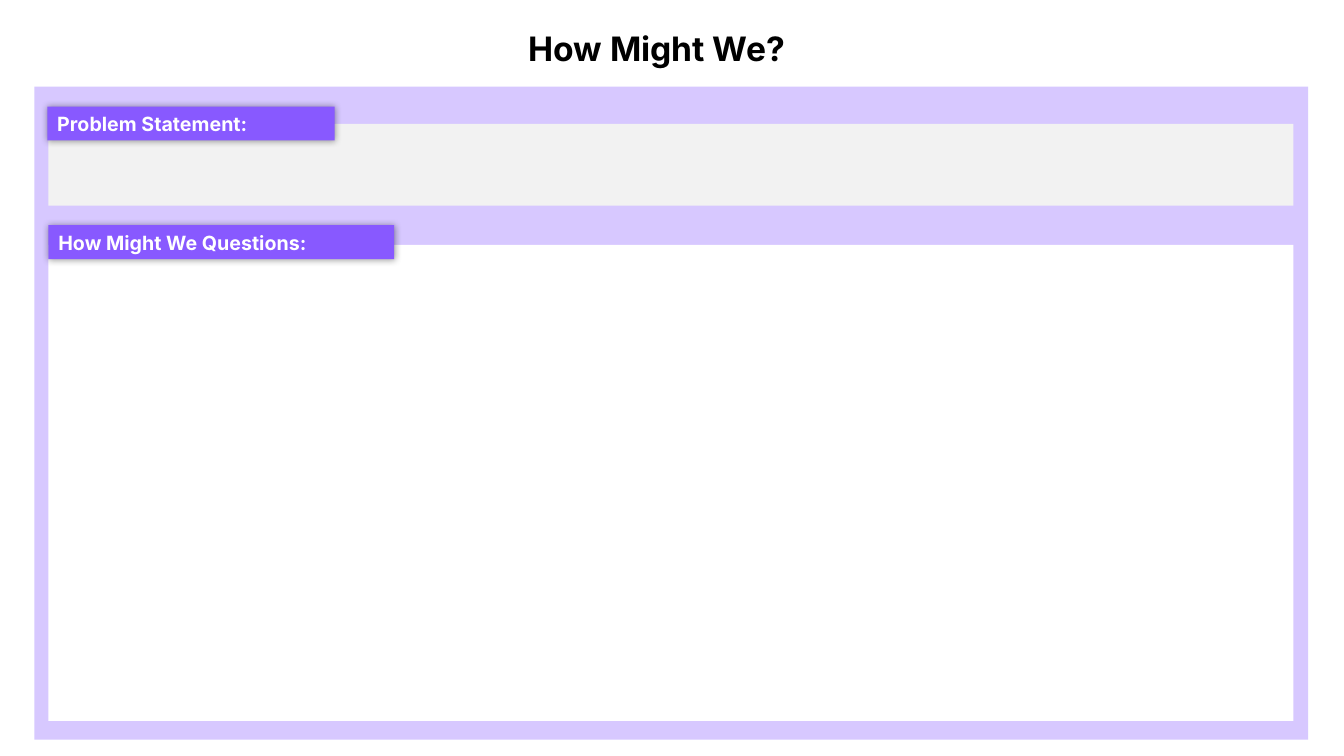
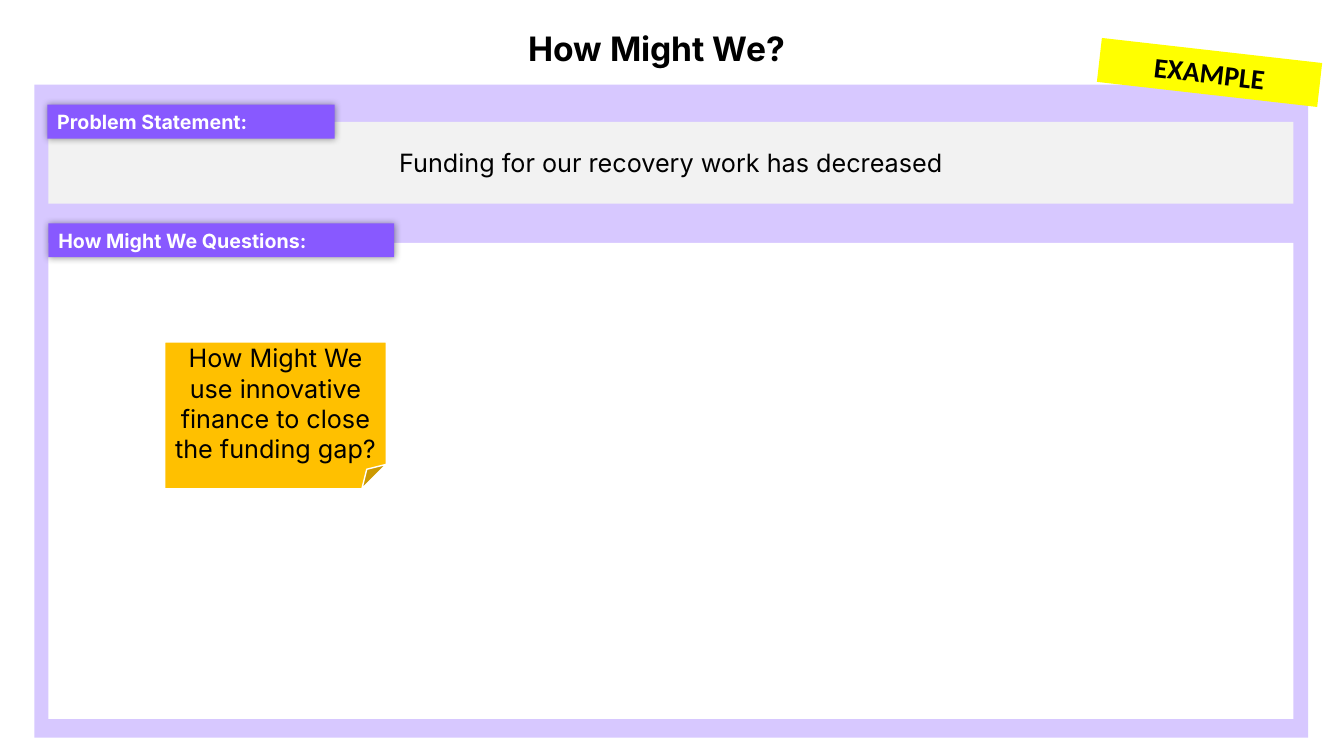
from dataclasses import dataclass

from lxml.etree import SubElement
from pptx import Presentation
from pptx.dml.color import RGBColor
from pptx.enum.shapes import MSO_SHAPE
from pptx.enum.text import MSO_ANCHOR, MSO_AUTO_SIZE, PP_ALIGN
from pptx.oxml.ns import qn
from pptx.util import Pt


@dataclass(frozen=True)
class Theme:
    black: str = "000000"
    white: str = "FFFFFF"
    lilac: str = "D7C8FF"
    violet: str = "8859FF"
    grey: str = "F2F2F2"
    amber: str = "FFC000"
    yellow: str = "FFFF00"
    font: str = "Inter"
    sticker_font: str = "Calibri"
    title_size: int = 24
    sticker_size: int = 20
    body_size: int = 18
    tag_size: int = 14


theme = Theme()


def write_text(shape, text, size, color=theme.black, bold=False,
               alignment=PP_ALIGN.CENTER, font_name=theme.font):
    frame = shape.text_frame
    frame.text = text
    frame.word_wrap = True
    frame.auto_size = MSO_AUTO_SIZE.NONE
    frame.vertical_anchor = MSO_ANCHOR.MIDDLE
    paragraph = frame.paragraphs[0]
    paragraph.alignment = alignment
    font = paragraph.runs[0].font
    font.name = font_name
    font.size = Pt(size)
    font.bold = bold
    font.color.rgb = RGBColor.from_string(color)


def add_box(slide, left, top, width, height, fill, preset=MSO_SHAPE.RECTANGLE):
    shape = slide.shapes.add_shape(preset, Pt(left), Pt(top), Pt(width), Pt(height))
    shape.shadow.inherit = False
    shape.fill.solid()
    shape.fill.fore_color.rgb = RGBColor.from_string(fill)
    shape.line.fill.background()
    return shape


presentation = Presentation()
presentation.slide_width = Pt(960)
presentation.slide_height = Pt(540)
title_only = presentation.slide_layouts[5]

panel_left, panel_width, panel_height = 24.5, 910, 466.5
field_left, field_width = 34.6, 889.2
tag_height = 24.2
fields = [
    ("How Might We Questions:", 34.6, 99, 247, 113, 340, theme.white),
    ("Problem Statement:", 33.8, 14.3, 205.2, 26.6, 58.4, theme.grey),
]
pages = [
    (61.9, {}),
    (60.5, {"Problem Statement:": "Funding for our recovery work has decreased"}),
]

for panel_top, answers in pages:
    slide = presentation.slides.add_slide(title_only)
    title = slide.shapes.title
    title.left, title.top = Pt(panel_left), Pt(16.6)
    title.width, title.height = Pt(889.2), Pt(36)
    write_text(title, "How Might We?", theme.title_size, bold=True)

    add_box(slide, panel_left, panel_top, panel_width, panel_height, theme.lilac)
    for label, tag_left, tag_offset, tag_width, field_offset, field_height, fill in fields:
        field = add_box(slide, field_left, panel_top + field_offset,
                        field_width, field_height, fill)
        if label in answers:
            write_text(field, answers[label], theme.body_size)

        tag = add_box(slide, tag_left, panel_top + tag_offset,
                      tag_width, tag_height, theme.violet)
        write_text(tag, label, theme.tag_size, theme.white, True, PP_ALIGN.LEFT)
        effects = tag._element.spPr.find(qn("a:effectLst"))
        shadow = SubElement(effects, qn("a:outerShdw"), blurRad=str(Pt(5)),
                            dist="0", dir="0", algn="ctr", rotWithShape="0")
        shadow_color = SubElement(shadow, qn("a:srgbClr"), val=theme.black)
        SubElement(shadow_color, qn("a:alpha"), val="40000")

example = presentation.slides[1]
note = add_box(example, 117.6, 244.2, 158.4, 105, theme.amber, MSO_SHAPE.FOLDED_CORNER)
note.line.color.rgb = RGBColor.from_string(theme.white)
note.line.width = Pt(1)
write_text(note, "How Might We use innovative finance to close the funding gap?",
           theme.body_size)

sticker = add_box(example, 784.8, 36, 158.4, 31.6, theme.yellow)
sticker.rotation = 6.5
write_text(sticker, "EXAMPLE", theme.sticker_size, bold=True,
           font_name=theme.sticker_font)

presentation.save("out.pptx")
